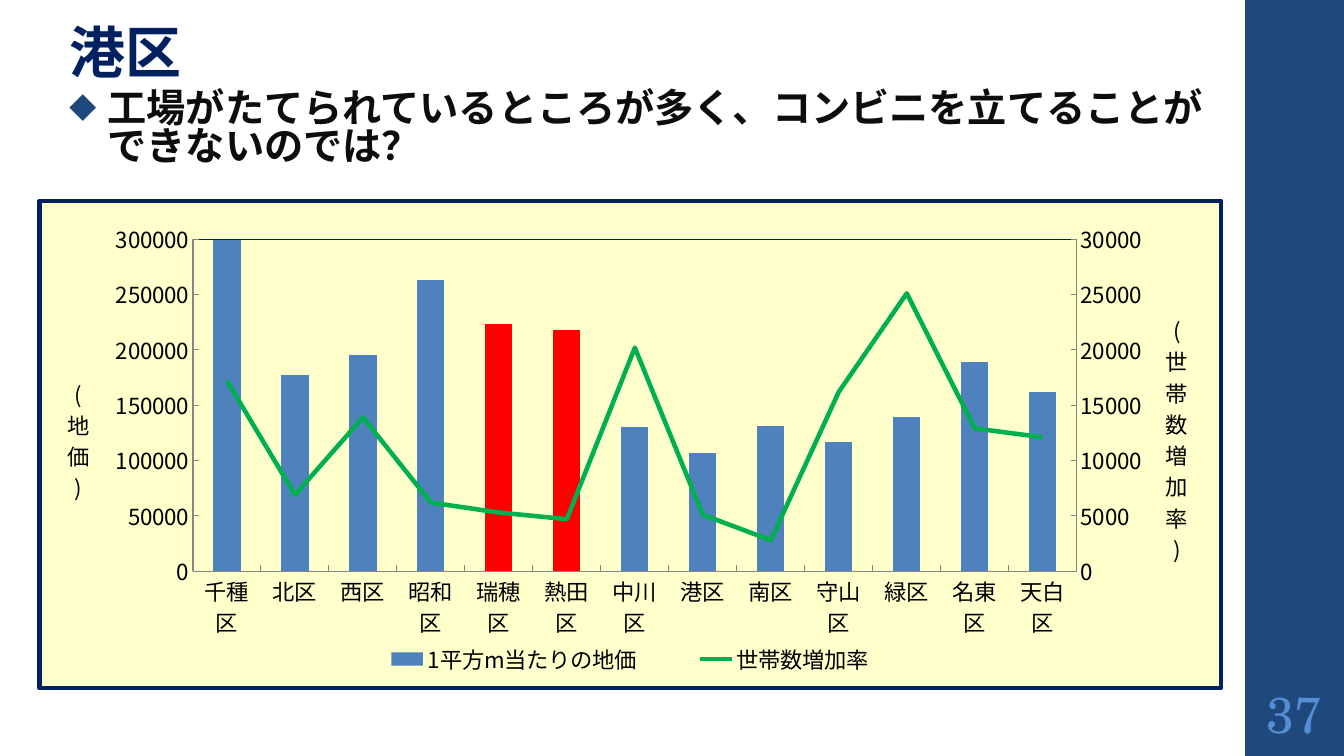
import copy
import pptx
import pptx.chart.axis
import pptx.chart.data
import pptx.dml.color
import pptx.enum.chart
import pptx.enum.shapes
import pptx.enum.text
import pptx.oxml
import pptx.oxml.ns
import pptx.util

Inches, Pt = pptx.util.Inches, pptx.util.Pt
qn = pptx.oxml.ns.qn
enum = pptx.enum.chart
SANS, SERIF = "Noto Sans CJK JP", "TeX Gyre Schola"
NAVY, BLUE, BLACK = "002060", "1F497D", "000000"
WARDS = ["千種区", "北区", "西区", "昭和区", "瑞穂区", "熱田区", "中川区",
         "港区", "南区", "守山区", "緑区", "名東区", "天白区"]
PRICES = [299000, 177000, 195000, 263000, 223000, 218000, 130000,
          107000, 131000, 117000, 139000, 189000, 162000]
GROWTH = [17200, 6900, 13900, 6200, 5300, 4700, 20200,
          5100, 2800, 16200, 25100, 12900, 12100]


def rgb(code):
    return pptx.dml.color.RGBColor.from_string(code)


def paint(fill, code):
    fill.solid()
    fill.fore_color.rgb = rgb(code)


def style(font, size, code=BLACK, face=SANS, bold=False):
    font.size, font.name, font.bold = Pt(size), face, bold
    paint(font.fill, code)


def set_asian(root):
    """Use each Latin typeface for East Asian text too."""
    for latin in list(root.iter(qn("a:latin"))):
        asian = latin.makeelement(qn("a:ea"), {"typeface": latin.get("typeface")})
        latin.addnext(asian)


def parse(xml):
    """Build an element from XML that uses the a: and c: prefixes."""
    head, tail = xml.split(">", 1)
    spaces = pptx.oxml.ns.nsdecls("a", "c")
    if head.endswith("/"):
        return pptx.oxml.parse_xml(f"{head[:-1]} {spaces}/>{tail}")
    return pptx.oxml.parse_xml(f"{head} {spaces}>{tail}")


def layout(x, y, w=None, h=None, inner=False):
    """Build a manual layout in fractions of the chart."""
    parts = ['<c:layoutTarget val="inner"/>'] if inner else []
    parts += ['<c:xMode val="edge"/><c:yMode val="edge"/>']
    parts += [f'<c:{k} val="{v}"/>' for k, v in zip("xywh", (x, y, w, h)) if v]
    return parse(f"<c:layout><c:manualLayout>{''.join(parts)}</c:manualLayout></c:layout>")


def place(parent, after, new):
    """Put a layout after a child, in place of any old one."""
    for old in parent.findall(qn("c:layout")):
        parent.remove(old)
    if after is None:
        parent.insert(0, new)
    else:
        parent.find(qn(after)).addnext(new)


def set_axis(axis):
    axis.major_tick_mark = enum.XL_TICK_MARK.INSIDE
    axis.minor_tick_mark = enum.XL_TICK_MARK.NONE
    axis.has_major_gridlines = False
    style(axis.tick_labels.font, 16)
    axis.tick_labels.number_format = "General"
    axis.tick_labels.number_format_is_linked = False
    paint(axis.format.line.fill, "868686")
    axis.format.line.width = Pt(0.75)


def set_value(node, name, top, x, y):
    """Set scale and stacked title of a value axis."""
    axis = pptx.chart.axis.ValueAxis(node)
    set_axis(axis)
    axis.minimum_scale, axis.maximum_scale, axis.major_unit = 0, top, top / 6
    frame = axis.axis_title.text_frame
    run = frame.paragraphs[0].add_run()
    run.text = name
    style(run.font, 16)
    title = node.find(qn("c:title"))
    body = next(title.iter(qn("a:bodyPr")))
    body.set("rot", "0")
    body.set("vert", "wordArtVertRtl")
    place(title, "c:tx", layout(x, y))
    return axis


def split_line(chart):
    """Move the second series to a line plot with its own axes."""
    area = chart.element.find(".//" + qn("c:plotArea"))
    bars = area.find(qn("c:barChart"))
    line = parse('<c:lineChart><c:grouping val="standard"/><c:varyColors val="0"/>'
                 '<c:marker val="1"/><c:axId val="501"/><c:axId val="502"/></c:lineChart>')
    ser = bars.findall(qn("c:ser"))[1]
    for flag in ser.findall(qn("c:invertIfNegative")):
        ser.remove(flag)
    line.find(qn("c:varyColors")).addnext(ser)
    bars.addnext(line)
    left = area.find(qn("c:valAx"))
    right = copy.deepcopy(left)
    top = copy.deepcopy(area.find(qn("c:catAx")))
    for node, own, other, side in ((right, "502", "501", "r"),
                                   (top, "501", "502", "t")):
        for tag, val in (("axId", own), ("crossAx", other),
                         ("axPos", side), ("crosses", "max")):
            node.find(qn("c:" + tag)).set("val", val)
    left.addnext(right)
    right.addnext(top)
    return area, left, right, top


def add_graph(slide, x, y, w, h):
    data = pptx.chart.data.CategoryChartData()
    data.categories = WARDS
    data.add_series("1平方m当たりの地価", PRICES)
    data.add_series("世帯数増加率", GROWTH)
    chart = slide.shapes.add_chart(enum.XL_CHART_TYPE.COLUMN_CLUSTERED, Inches(x),
                                   Inches(y), Inches(w), Inches(h), data).chart
    chart.has_title = False
    style(chart.font, 10, face=SERIF)
    area, left, right, top = split_line(chart)
    place(area, None, layout(0.13, 0.079, 0.748, 0.681, True))
    set_axis(chart.category_axis)
    set_value(left, "(地価)", 300000, 0.02, 0.35)
    grid = set_value(right, "(世帯数増加率)", 30000, 0.95, 0.22)
    grid.major_gridlines.format.line.fill.background()
    edge = pptx.chart.axis.CategoryAxis(top)
    set_axis(edge)
    edge.major_tick_mark = enum.XL_TICK_MARK.NONE
    edge.tick_label_position = enum.XL_TICK_LABEL_POSITION.NONE
    paint(edge.format.line.fill, NAVY)

    bars, line = chart.plots
    bars.gap_width, bars.vary_by_categories = 150, False
    price, growth = bars.series[0], line.series[0]
    paint(price.format.fill, "4F81BD")
    for i in (4, 5):
        paint(price.points[i].format.fill, "FF0000")
    paint(growth.format.line.fill, "00B050")
    growth.format.line.width = Pt(3.25)
    growth.marker.style = enum.XL_MARKER_STYLE.NONE
    growth.smooth = False

    chart.has_legend = True
    key = chart.legend
    key.position, key.include_in_layout = enum.XL_LEGEND_POSITION.RIGHT, False
    style(key.font, 16)
    legend = chart.element.find(".//" + qn("c:legend"))
    place(legend, "c:legendPos", layout(0.25, 0.9, 0.5, 0.08))
    chart.element.find(qn("c:chart")).addnext(parse(
        '<c:spPr><a:solidFill><a:srgbClr val="FFFFCC"/></a:solidFill><a:ln w="38100">'
        f'<a:solidFill><a:srgbClr val="{NAVY}"/></a:solidFill></a:ln></c:spPr>'))
    set_asian(chart.element)


def add_box(slide, x, y, w, h):
    box = slide.shapes.add_textbox(Inches(x), Inches(y), Inches(w), Inches(h))
    box.text_frame.word_wrap = True
    return box


def add_write(par, text, *look):
    run = par.add_run()
    run.text = text
    style(run.font, *look)


def add_head(slide, x, y, w, h):
    box = add_box(slide, x, y, w, h)
    frame = box.text_frame
    frame.auto_size = pptx.enum.text.MSO_AUTO_SIZE.SHAPE_TO_FIT_TEXT
    title, point = frame.paragraphs[0], frame.add_paragraph()
    add_write(title, "港区", 40, NAVY, SANS, True)
    add_write(point, "工場がたてられているところが多く、コンビニを立てることができないのでは？",
              28, "0D0D0D", SANS, True)
    for par in (title, point):
        par.line_spacing, par.space_before = 0.8, Pt(6)
    props = point._p.get_or_add_pPr()
    props.set("marL", str(Inches(0.38)))
    props.set("indent", str(Inches(-0.38)))
    for xml in (f'<a:buClr><a:srgbClr val="{BLUE}"/></a:buClr>', '<a:buSzPct val="70000"/>',
                f'<a:buFont typeface="{SANS}"/>', '<a:buChar char="◆"/>'):
        props.append(parse(xml))
    set_asian(box.element)


def add_side(slide, x, y, w, h):
    """Draw the side band with the page number at its foot."""
    band = slide.shapes.add_shape(pptx.enum.shapes.MSO_SHAPE.RECTANGLE,
                                  Inches(x), Inches(y), Inches(w), Inches(h))
    band.shadow.inherit = False
    paint(band.fill, BLUE)
    band.line.fill.background()
    frame = add_box(slide, x, y + h - 0.75, w, 0.65).text_frame
    frame.vertical_anchor = pptx.enum.text.MSO_ANCHOR.MIDDLE
    frame.margin_left = frame.margin_right = Inches(0.05)
    par = frame.paragraphs[0]
    par.alignment = pptx.enum.text.PP_ALIGN.CENTER
    add_write(par, "37", 36, "558ED5", SERIF)


def main():
    deck = pptx.Presentation()
    deck.slide_width, deck.slide_height = Inches(13.33), Inches(7.5)
    slide = deck.slides.add_slide(deck.slide_layouts[6])
    add_side(slide, 12.35, 0, 0.98, 7.5)
    add_graph(slide, 0.37, 1.97, 11.76, 4.88)
    add_head(slide, 0.59, 0.25, 11.76, 1.72)
    deck.save("out.pptx")


if __name__ == "__main__":
    main()
